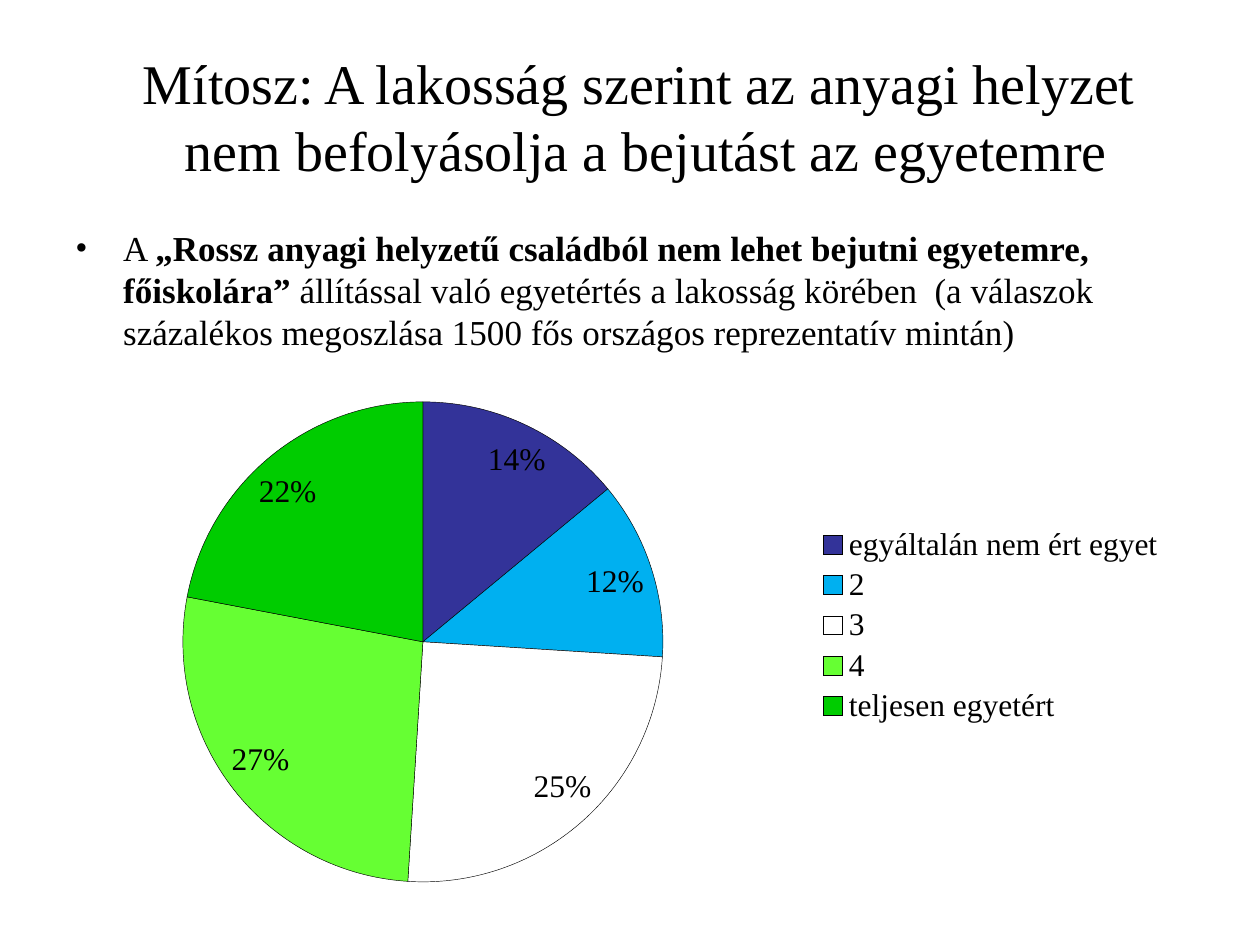
"""Builds a slide with a pie chart of opinions on access to university."""
from dataclasses import dataclass
from typing import NamedTuple

from lxml.etree import SubElement
from pptx import Presentation
from pptx.chart.chart import Chart
from pptx.chart.data import CategoryChartData
from pptx.dml.color import RGBColor
from pptx.enum.chart import XL_CHART_TYPE as ChartType
from pptx.enum.chart import XL_LABEL_POSITION as LabelPosition
from pptx.enum.chart import XL_LEGEND_POSITION as LegendPosition
from pptx.enum.text import MSO_ANCHOR as Anchor
from pptx.enum.text import PP_ALIGN as Align
from pptx.oxml.ns import qn
from pptx.slide import Slide
from pptx.text.text import Font, TextFrame
from pptx.util import Inches, Pt


@dataclass(frozen=True)
class Theme:
    font: str = "Times New Roman"
    ink: str = "000000"
    title_size: int = 32
    body_size: int = 20
    chart_size: int = 18
    line_width: float = 0.25


class Box(NamedTuple):
    left: float
    top: float
    width: float
    height: float


class Answer(NamedTuple):
    label: str
    percent: int
    color: str


THEME = Theme()
TITLE_BOX = Box(0.27, 0.29, 9.72, 1.25)
BODY_BOX = Box(0.5, 1.75, 9, 1.1)
CHART_BOX = Box(0.74, 2.8, 8.58, 4.33)
PLOT_SHARE = Box(0.08, 0.09, 0.45, 0.88)
LEGEND_SHARE = Box(0.66, 0.31, 0.34, 0.38)
TITLE = "Mítosz: A lakosság szerint az anyagi helyzet \vnem befolyásolja a bejutást az egyetemre"
BODY_RUNS = (
    ("A ", False),
    ("„Rossz anyagi helyzetű családból nem lehet bejutni egyetemre, főiskolára” ", True),
    ("állítással való egyetértés a lakosság körében  (a válaszok százalékos "
     "megoszlása 1500 fős országos reprezentatív mintán)", False),
)
ANSWERS = (
    Answer("egyáltalán nem ért egyet", 14, "333399"),
    Answer("2", 12, "00B0F0"),
    Answer("3", 25, "FFFFFF"),
    Answer("4", 27, "66FF33"),
    Answer("teljesen egyetért", 22, "00CC00"),
)


def style_font(font: Font, size: int) -> None:
    """Apply the theme's typeface and ink at the given size."""
    font.name = THEME.font
    font.size = Pt(size)
    font.color.rgb = RGBColor.from_string(THEME.ink)


def add_text_frame(slide: Slide, box: Box) -> TextFrame:
    """Add a wrapping text box and return its frame."""
    frame = slide.shapes.add_textbox(*map(Inches, box)).text_frame
    frame.word_wrap = True
    return frame


def add_title(slide: Slide) -> None:
    """Add the centred two-line title."""
    frame = add_text_frame(slide, TITLE_BOX)
    frame.vertical_anchor = Anchor.MIDDLE
    paragraph = frame.paragraphs[0]
    paragraph.text = TITLE
    paragraph.alignment = Align.CENTER
    style_font(paragraph.font, THEME.title_size)


def add_body(slide: Slide) -> None:
    """Add the bulleted statement with its bold quotation."""
    paragraph = add_text_frame(slide, BODY_BOX).paragraphs[0]
    paragraph.space_before = Pt(4)
    style_font(paragraph.font, THEME.body_size)
    for text, bold in BODY_RUNS:
        run = paragraph.add_run()
        run.text = text
        run.font.bold = bold
    properties = paragraph._p.get_or_add_pPr()
    properties.set("marL", str(Inches(0.38)))
    properties.set("indent", str(Inches(-0.38)))
    for tag, attributes in (("a:buFont", {"typeface": THEME.font}), ("a:buChar", {"char": "•"})):
        bullet = properties.makeelement(qn(tag), attributes)
        properties.insert_element_before(bullet, "a:tabLst", "a:defRPr", "a:extLst")


def place(element, share: Box, inner: bool = False) -> None:
    """Fix a chart part at the given shares of the chart's size."""
    layout = element.find(qn("c:layout"))
    if layout is None:
        layout = element.makeelement(qn("c:layout"), {})
        entry = element.find(qn("c:legendPos"))
        if entry is None:
            element.insert(0, layout)
        else:
            entry.addnext(layout)
    manual = SubElement(layout, qn("c:manualLayout"))
    if inner:
        SubElement(manual, qn("c:layoutTarget"), val="inner")
    for tag in ("xMode", "yMode"):
        SubElement(manual, qn(f"c:{tag}"), val="edge")
    for tag, value in zip("xywh", share):
        SubElement(manual, qn(f"c:{tag}"), val=str(value))


def style_slices(chart: Chart) -> None:
    """Colour and outline each slice and label it with its percentage."""
    plot = chart.plots[0]
    plot.vary_by_categories = True
    for index, answer in enumerate(ANSWERS):
        slice_format = plot.series[0].points[index].format
        slice_format.fill.solid()
        slice_format.fill.fore_color.rgb = RGBColor.from_string(answer.color)
        slice_format.line.color.rgb = RGBColor.from_string(THEME.ink)
        slice_format.line.width = Pt(THEME.line_width)
    labels = plot.series[0].data_labels
    labels.show_value = False
    labels.show_percentage = True
    labels.number_format = "0%"
    labels.number_format_is_linked = False
    labels.position = LabelPosition.BEST_FIT
    style_font(labels.font, THEME.chart_size)


def add_pie(slide: Slide) -> None:
    """Add the pie chart of answers with its legend."""
    data = CategoryChartData()
    data.categories = [answer.label for answer in ANSWERS]
    data.add_series("Series 1", [answer.percent for answer in ANSWERS])
    chart = slide.shapes.add_chart(ChartType.PIE, *map(Inches, CHART_BOX), data).chart
    chart.has_title = False
    style_font(chart.font, THEME.chart_size)
    chart.has_legend = True
    chart.legend.position = LegendPosition.RIGHT
    chart.legend.include_in_layout = False
    style_font(chart.legend.font, THEME.chart_size)
    style_slices(chart)
    place(chart._chartSpace.chart.plotArea, PLOT_SHARE, inner=True)
    place(chart.legend._element, LEGEND_SHARE)


def main() -> None:
    """Build and save the presentation."""
    presentation = Presentation()
    presentation.slide_width, presentation.slide_height = Inches(10), Inches(7.5)
    slide = presentation.slides.add_slide(presentation.slide_layouts[6])
    add_title(slide)
    add_body(slide)
    add_pie(slide)
    presentation.save("out.pptx")


if __name__ == "__main__":
    main()
